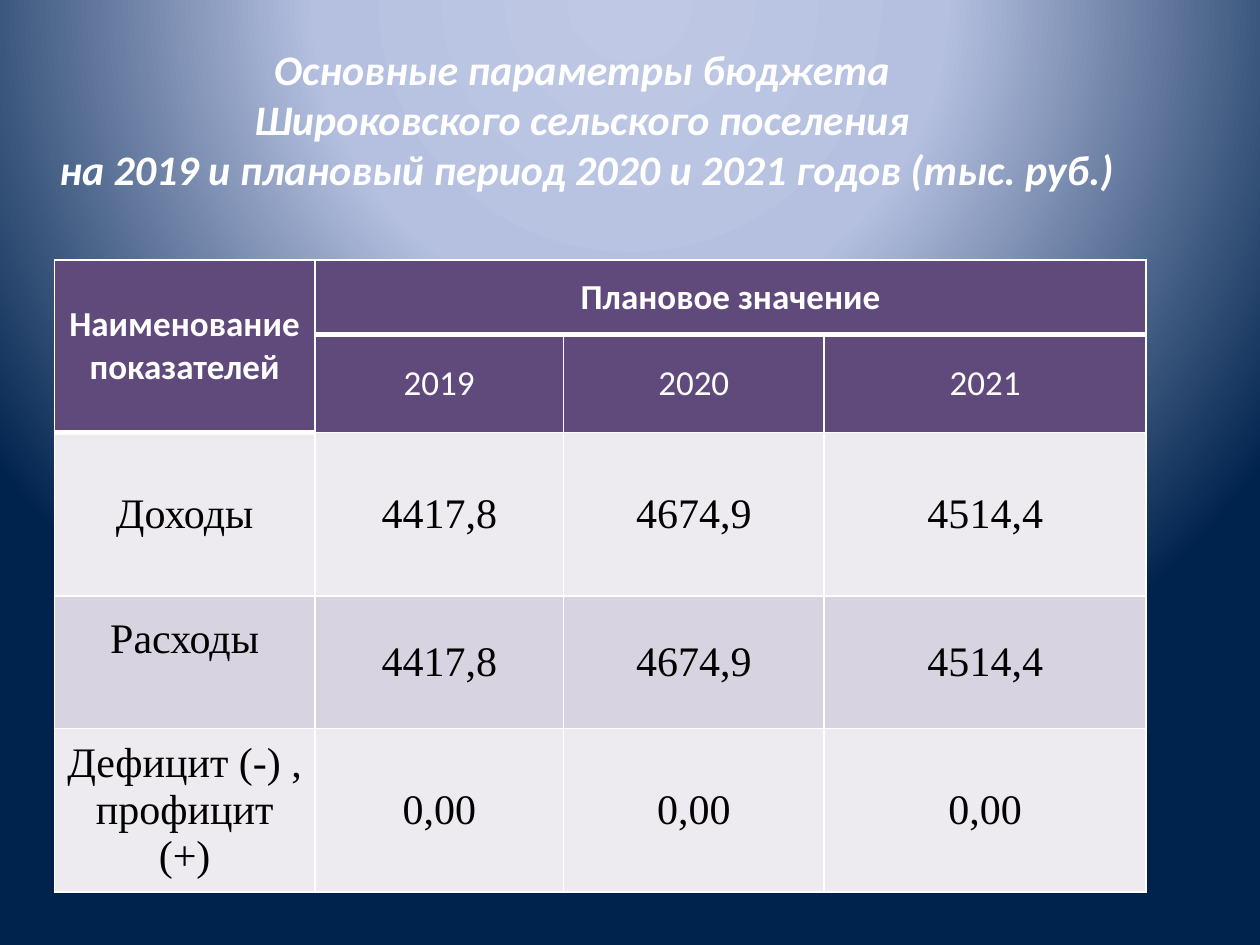
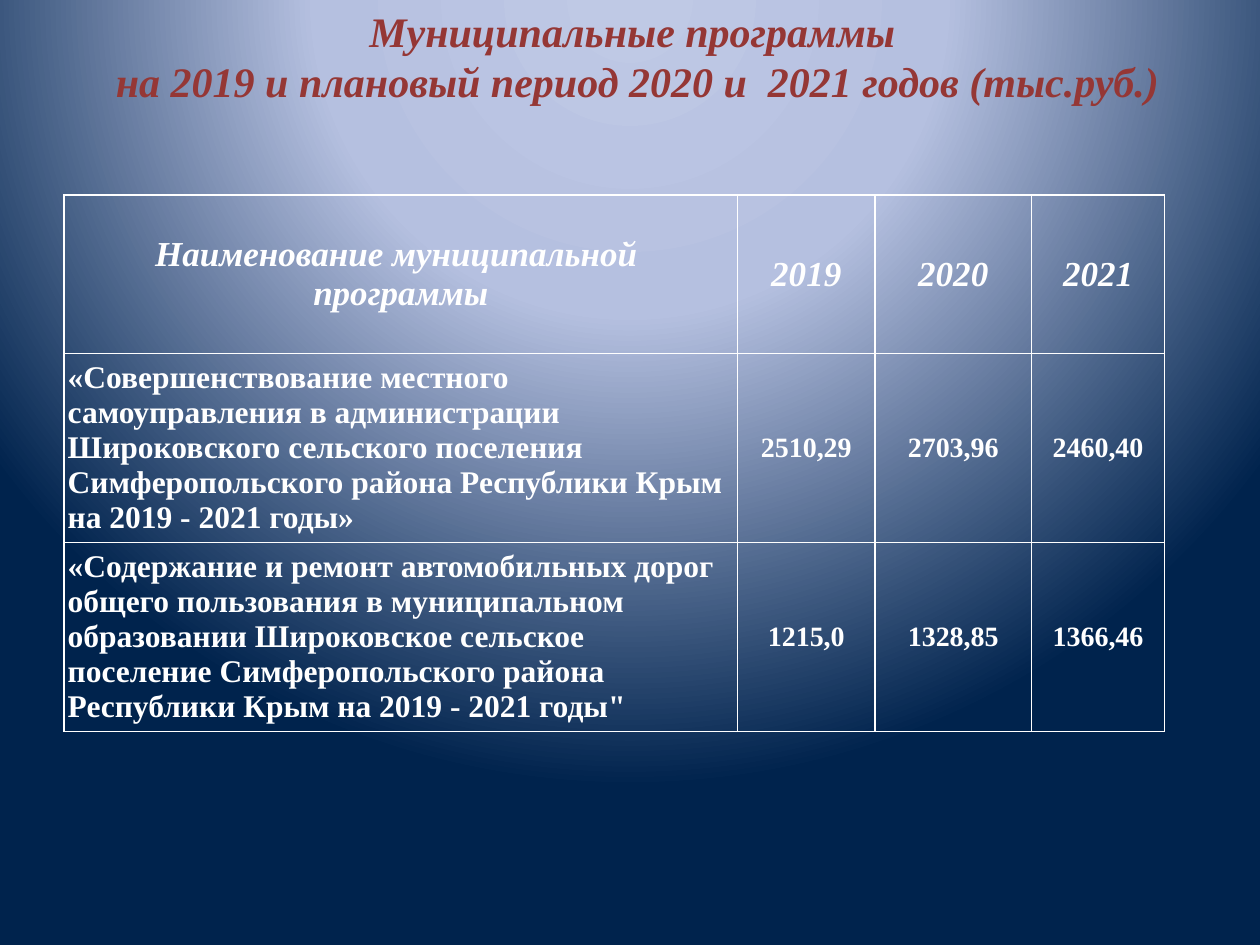
from lxml.etree import SubElement
from pptx import Presentation
from pptx.dml.color import RGBColor
from pptx.enum.text import MSO_ANCHOR, MSO_AUTO_SIZE, PP_ALIGN
from pptx.oxml import parse_xml
from pptx.oxml.ns import nsdecls, qn
from pptx.util import Pt

COLORS = {
    "glow": "BFC9E5", "haze": "B5C0E0", "navy": "00234D",
    "white": "FFFFFF", "black": "000000", "red": "953735",
    "purple": "604A7B", "light": "EDEAF0", "lilac": "D8D3E0",
}
SANS, SERIF = "Calibri", "Times New Roman"

BUDGET = {
    "title": "Основные параметры бюджета \nШироковского сельского поселения \n"
             "на 2019 и плановый период 2020 и 2021 годов (тыс. руб.)",
    "title_box": (-25, 21, 720.5, 116.5),
    "title_style": (SANS, 24, "white", True, True),
    "origin": (31, 148.5),
    "columns": (149, 142, 149, 184),
    "heights": (42.5, 55, 93.5, 75.5, 93.5),
    "rows": [
        ("Наименование показателей", "Плановое значение", None, None),
        (None, "2019", "2020", "2021"),
        ("Доходы", "4417,8", "4674,9", "4514,4"),
        ("Расходы", "4417,8", "4674,9", "4514,4"),
        ("Дефицит (-) , профицит (+)", "0,00", "0,00", "0,00"),
    ],
    "merges": [((0, 0), (1, 0)), ((0, 1), (0, 3))],
    "fills": ("purple", "purple", "light", "lilac", "light"),
    "insets": (7.2, 3.6),
    "heavy": {(0, 0, "B"), (1, 0, "B"), (2, 0, "T")}
             | {(row, col, side) for row, side in ((0, "B"), (1, "T")) for col in (1, 2, 3)},
}

PROGRAMS = {
    "title": "Муниципальные программы \n"
             "на 2019 и плановый период 2020 и  2021 годов (тыс.руб.)",
    "title_box": (8.5, -0.5, 711.5, 87),
    "title_style": (SERIF, 24, "red", True, True),
    "origin": (36.5, 111.5),
    "columns": (385, 78.5, 89.5, 76),
    "heights": (90.5, 108, 108),
    "rows": [
        ("Наименование муниципальной  программы", "2019", "2020", "2021"),
        ("«Совершенствование местного самоуправления в администрации "
         "Широковского сельского поселения\n"
         "Симферопольского района Республики Крым на 2019 - 2021 годы»",
         "2510,29", "2703,96", "2460,40"),
        ("«Содержание и ремонт автомобильных дорог общего пользования в "
         "муниципальном образовании Широковское сельское поселение "
         "Симферопольского района Республики Крым на 2019 - 2021 годы\"",
         "1215,0", "1328,85", "1366,46"),
    ],
    "merges": [],
    "fills": (None, None, None),
    "insets": (2.2, 0),
    "heavy": set(),
}


def budget_style(row, col):
    if row < 2:
        return SANS, 20, "white", row == 0, False
    return SERIF, 24, "black", False, False


def program_style(row, col):
    size = 20 if row == 0 else 18 if col == 0 else 16
    return SERIF, size, "white", True, row == 0


def rgb(name):
    return RGBColor.from_string(COLORS[name])


def format_text(frame, style, align=PP_ALIGN.CENTER):
    name, size, color, bold, italic = style
    for paragraph in frame.paragraphs:
        paragraph.alignment = align
        font = paragraph.font
        font.name, font.size, font.bold, font.italic = name, Pt(size), bold, italic
        font.color.rgb = rgb(color)


def set_background(master):
    stops = "".join(
        f'<a:gs pos="{pos}000"><a:srgbClr val="{COLORS[name]}"/></a:gs>'
        for pos, name in ((0, "glow"), (40, "haze"), (100, "navy")))
    background = parse_xml(
        f'<p:bg {nsdecls("p", "a")}><p:bgPr><a:gradFill rotWithShape="1">'
        f'<a:gsLst>{stops}</a:gsLst><a:path path="circle">'
        '<a:fillToRect l="50000" t="-80000" r="50000" b="180000"/></a:path>'
        '</a:gradFill><a:effectLst/></p:bgPr></p:bg>')
    content = master.element.find(qn("p:cSld"))
    content.replace(content.find(qn("p:bg")), background)


def add_borders(cell, row, col, heavy):
    properties = cell._tc.get_or_add_tcPr()
    for side in "LRTB":
        width = 3 if (row, col, side) in heavy else 1
        line = SubElement(properties, qn(f"a:ln{side}"), w=str(Pt(width)))
        fill = SubElement(line, qn("a:solidFill"))
        SubElement(fill, qn("a:srgbClr"), val=COLORS["white"])


def add_title(slide, content):
    title = slide.shapes.title
    title.left, title.top, title.width, title.height = map(Pt, content["title_box"])
    frame = title.text_frame
    frame.text = content["title"]
    frame.word_wrap = True
    frame.auto_size = MSO_AUTO_SIZE.NONE
    frame.vertical_anchor = MSO_ANCHOR.TOP
    format_text(frame, content["title_style"])


def add_data_table(slide, content, style_of):
    columns, heights = content["columns"], content["heights"]
    left, top = content["origin"]
    table = slide.shapes.add_table(
        len(heights), len(columns), Pt(left), Pt(top),
        Pt(sum(columns)), Pt(sum(heights))).table
    table.horz_banding = False
    for column, width in zip(table.columns, columns):
        column.width = Pt(width)
    for row, height in zip(table.rows, heights):
        row.height = Pt(height)
    for first, last in content["merges"]:
        table.cell(*first).merge(table.cell(*last))

    side_inset, end_inset = map(Pt, content["insets"])
    for r, values in enumerate(content["rows"]):
        for c, value in enumerate(values):
            cell = table.cell(r, c)
            cell.margin_left = cell.margin_right = side_inset
            cell.margin_top = cell.margin_bottom = end_inset
            cell.vertical_anchor = MSO_ANCHOR.MIDDLE
            add_borders(cell, r, c, content["heavy"])
            fill = content["fills"][r]
            if fill:
                cell.fill.solid()
                cell.fill.fore_color.rgb = rgb(fill)
            else:
                cell.fill.background()
            if value:
                cell.text = value
                is_program = content is PROGRAMS and r > 0 and c == 0
                format_text(cell.text_frame, style_of(r, c),
                            PP_ALIGN.LEFT if is_program else PP_ALIGN.CENTER)
    return table


def main():
    deck = Presentation()
    deck.slide_width, deck.slide_height = Pt(720), Pt(540)
    set_background(deck.slide_master)
    tables = []
    for content, style_of in ((BUDGET, budget_style), (PROGRAMS, program_style)):
        slide = deck.slides.add_slide(deck.slide_layouts[5])
        add_title(slide, content)
        tables.append(add_data_table(slide, content, style_of))
    expenses = tables[0].cell(3, 0)
    expenses.margin_bottom = Pt(30)
    deck.save("out.pptx")


if __name__ == "__main__":
    main()
